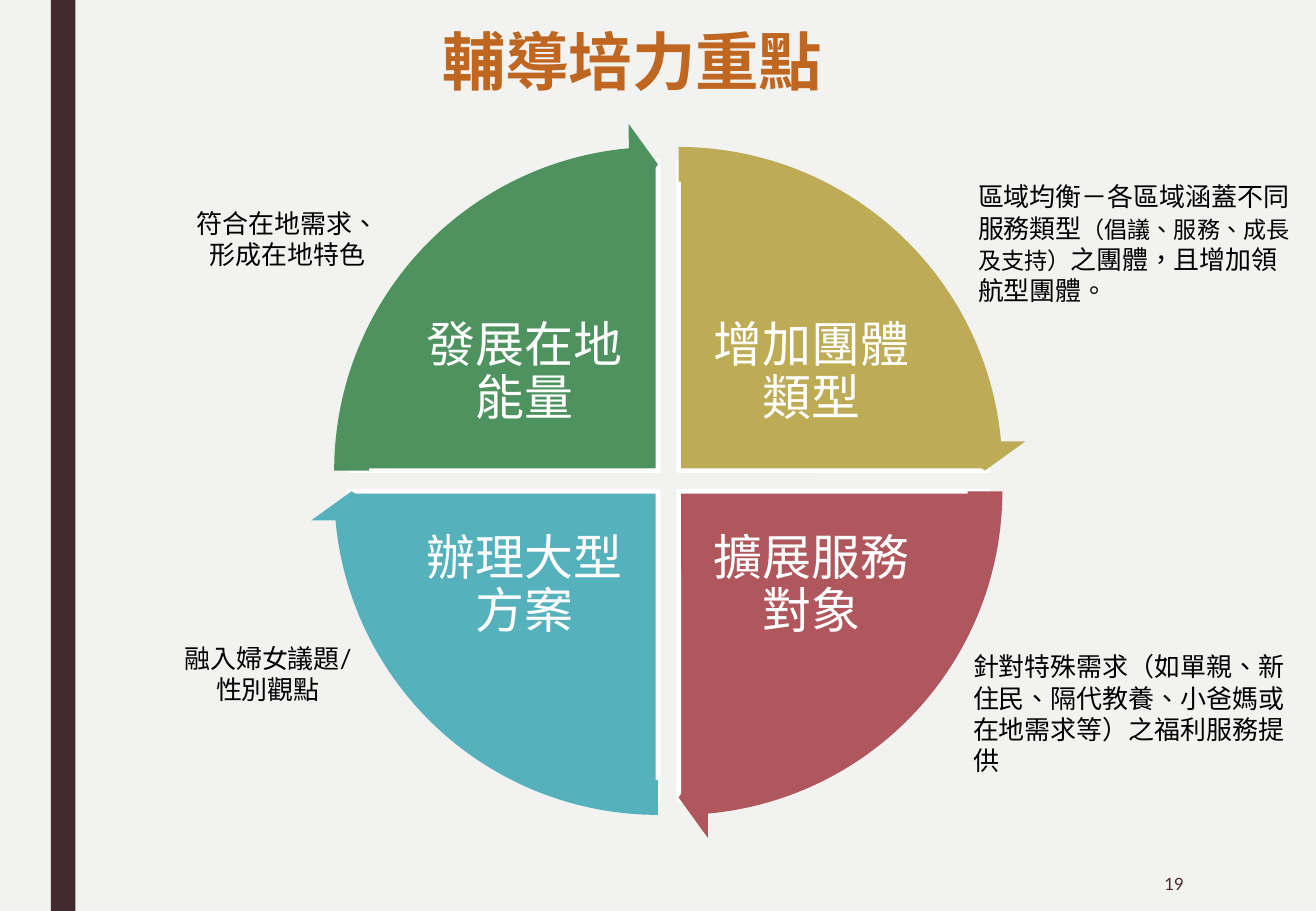
from lxml.etree import SubElement
from pptx import Presentation
from pptx.dml.color import RGBColor
from pptx.enum.lang import MSO_LANGUAGE_ID as Language
from pptx.enum.shapes import MSO_SHAPE as Shape
from pptx.enum.text import MSO_ANCHOR as Anchor, MSO_AUTO_SIZE as AutoSize, PP_ALIGN as Align
from pptx.oxml.ns import qn
from pptx.util import Emu, Pt

FONT = "Lato"
WHITE, BLACK, DARK, ORANGE = "FFFFFF", "000000", "432A30", "BF6621"
FULL_TURN, QUARTER = 216, 54  # angles in adjustment units

# Clockwise from the top right: label, colour, column, row
QUADRANTS = [
    ("增加團體類型", "BDAB56", 1, 0),
    ("擴展服務對象", "B0565D", 1, 1),
    ("辦理大型方案", "55B1BC", 0, 1),
    ("發展在地能量", "4D925F", 0, 0),
]

# Box, alignment, wrapping, paragraphs of (text, size) runs
NOTES = [
    ((49, 524, 343, 62), Align.CENTER, True,
     [[("融入婦女議題/", 15.4)], [("性別觀點", 15.4)]]),
    ((151, 166, 171, 62), Align.CENTER, False,
     [[("符合在地需求、", 15.4)], [("形成在地特色", 15.4)]]),
    ((795, 144, 282, 140), Align.LEFT, True,
     [[("區域均衡－各區域涵蓋不同服務類型", 15.4),
       ("（倡議、服務、成長及支持）", 13.7),
       ("之團體，且增加領航型團體。", 15.4)]]),
    ((791, 531, 277, 114), Align.LEFT, True,
     [[("針對特殊需求（如單親、新住民、隔代教養、小爸媽或在地需求等）之福利服務提供", 15.4)]]),
]


def px(length):
    return Emu(length * 9144)  # 100 px to the inch


def color(value):
    return RGBColor.from_string(value)


def add_figure(page, kind, box, fill, adjustments=(), line=None):
    figure = page.shapes.add_shape(kind, *map(px, box))
    figure.shadow.inherit = False
    figure.fill.solid()
    figure.fill.fore_color.rgb = color(fill)
    if line:
        figure.line.color.rgb = color(line)
        figure.line.width = Pt(2.75)
    else:
        figure.line.fill.background()
    for index, value in enumerate(adjustments):
        figure.adjustments[index] = value


def add_text(page, box, paragraphs, ink, align=Align.LEFT, wrap=True,
             anchor=Anchor.TOP, bold=False, inset=None, spacing=None, grow=False):
    frame = page.shapes.add_textbox(*map(px, box)).text_frame
    frame.word_wrap = wrap
    frame.vertical_anchor = anchor
    if grow:
        frame.auto_size = AutoSize.SHAPE_TO_FIT_TEXT
    if inset is not None:
        frame.margin_left = frame.margin_right = px(inset)
        frame.margin_top = frame.margin_bottom = px(inset)
    for index, spans in enumerate(paragraphs):
        para = frame.add_paragraph() if index else frame.paragraphs[0]
        para.alignment = align
        para.line_spacing = spacing
        for text, size in spans:
            span = para.add_run()
            span.text = text
            font = span.font
            font.size, font.bold, font.name = Pt(size), bold, FONT
            font.color.rgb = color(ink)
            font.language_id = Language.TRADITIONAL_CHINESE
            # East Asian typeface
            SubElement(span._r.get_or_add_rPr(), qn("a:ea"), typeface=FONT)


def add_wheel(page, left, top):
    diameter, gap, rim = 509, 17, 32
    # Quarter pies with their labels
    for index, (label, fill, column, row) in enumerate(QUADRANTS):
        start = (3 + index) * QUARTER % FULL_TURN
        box = (left + column * gap, top + row * gap, diameter, diameter)
        add_figure(page, Shape.PIE, box, fill,
                   (start, (start + QUARTER) % FULL_TURN), WHITE)
        label_box = (left + 51 + column * 236, top + 105 + row * 175, 188, 139)
        add_text(page, label_box, [[(label, 29)]], WHITE, Align.CENTER,
                 anchor=Anchor.MIDDLE, inset=4, spacing=0.9)
    # Arrows along the rim
    for index, (label, fill, column, row) in enumerate(QUADRANTS):
        start = (3 + index) * QUARTER % FULL_TURN
        size = diameter + 2 * rim
        box = (left - rim + column * gap, top - rim + row * gap, size, size)
        add_figure(page, Shape.CIRCULAR_ARROW, box, fill,
                   (0.05, 3.28, start + 50.72, start, 0.06))


def add_notes(page):
    for box, align, wrap, paragraphs in NOTES:
        add_text(page, box, paragraphs, BLACK, align, wrap, grow=True)


def add_frame(page, height):
    # Side bar, title and page number
    add_figure(page, Shape.RECTANGLE, (42, 0, 20, height), DARK)
    add_text(page, (354, 13, 337, 73), [[("輔導培力重點", 37.6)]], ORANGE,
             wrap=False, bold=True, grow=True)
    add_text(page, (842, 706, 142, 44), [[("19", 10)]], DARK, Align.RIGHT,
             anchor=Anchor.MIDDLE)


def main():
    width, height = 1083, 750
    deck = Presentation()
    deck.slide_width, deck.slide_height = px(width), px(height)
    page = deck.slides.add_slide(deck.slide_layouts[6])
    page.background.fill.solid()
    page.background.fill.fore_color.rgb = color("F2F2F0")
    add_frame(page, height)
    add_wheel(page, 287, 133)
    add_notes(page)
    deck.save("out.pptx")


if __name__ == "__main__":
    main()
